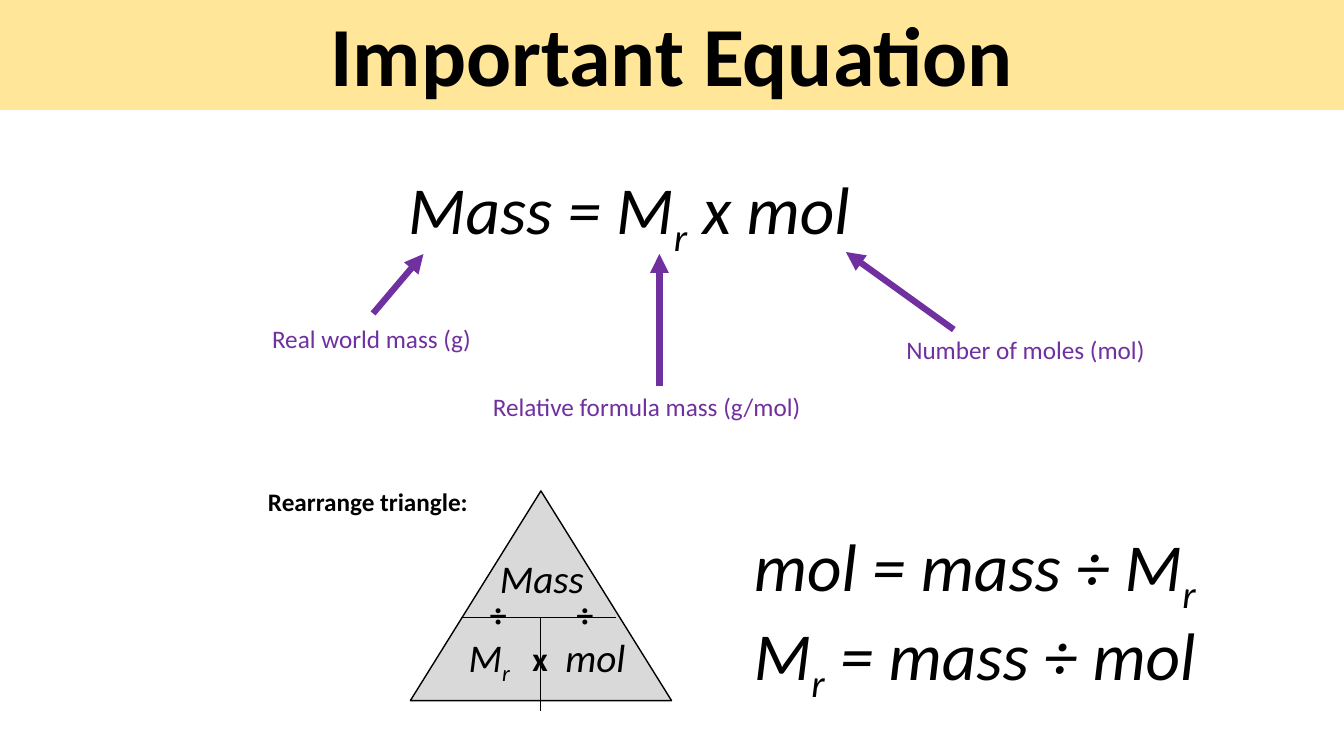
from lxml.etree import SubElement
from pptx import Presentation
from pptx.dml.color import RGBColor
from pptx.enum.shapes import MSO_CONNECTOR as CONN, MSO_SHAPE as SHAPE
from pptx.enum.text import MSO_ANCHOR as ANCHOR, MSO_AUTO_SIZE as AUTO, PP_ALIGN as ALIGN
from pptx.oxml.ns import qn
from pptx.util import Pt

PX = 9144
FONT = "Calibri"
COLORS = {"band": "FFE699", "text": "000000", "label": "7030A0", "triangle": "D9D9D9"}


def px(*lengths):
    """Turn px lengths into EMU."""
    return [n * PX for n in lengths]


def color(name):
    """Look up a named colour."""
    return RGBColor.from_string(COLORS[name])


def format_run(r, size, name="text", bold=False, italic=False):
    """Set the font of a run."""
    f = r.font
    f.name, f.size, f.bold, f.italic = FONT, Pt(size), bold, italic
    f.color.rgb = color(name)


def add_title(slide, text, box):
    """Fill the title placeholder and make it a coloured band."""
    sp = slide.shapes.title
    sp.left, sp.top, sp.width, sp.height = px(*box)
    sp.fill.solid()
    sp.fill.fore_color.rgb = color("band")
    tf = sp.text_frame
    tf.text = text
    tf.vertical_anchor = ANCHOR.BOTTOM
    p = tf.paragraphs[0]
    p.alignment, p.line_spacing = ALIGN.CENTER, 0.9
    format_run(p.runs[0], 60, bold=True)


def add_text(shapes, text, box, size, wrap=False, **style):
    """Add a text box; parts between underscores become subscripts."""
    tf = shapes.add_textbox(*px(*box)).text_frame
    tf.word_wrap, tf.auto_size = wrap, AUTO.SHAPE_TO_FIT_TEXT
    for i, part in enumerate(text.split("_")):
        if part:
            r = tf.paragraphs[0].add_run()
            r.text = part
            format_run(r, size, **style)
            if i % 2:
                r.font._element.set("baseline", "-25000")


def add_line(shapes, ends, name, width, arrow=False):
    """Add a straight line, with an arrowhead at its end if asked."""
    c = shapes.add_connector(CONN.STRAIGHT, *px(*ends))
    c.line.color.rgb = color(name)
    c.line.width = Pt(width)
    if arrow:
        SubElement(c.line._get_or_add_ln(), qn("a:tailEnd"), type="triangle")
    SubElement(c._element.spPr, qn("a:effectLst"))


def add_callout(slide, text, box, ends):
    """Add a grouped label and arrow."""
    shapes = slide.shapes.add_group_shape().shapes
    add_line(shapes, ends, "label", 4.5, arrow=True)
    add_text(shapes, text, box, 18, name="label")


def add_triangle(slide, box):
    """Add the grey outlined triangle."""
    sp = slide.shapes.add_shape(SHAPE.ISOSCELES_TRIANGLE, *px(*box))
    sp.shadow.inherit = False
    sp.fill.solid()
    sp.fill.fore_color.rgb = color("triangle")
    sp.line.color.rgb = color("text")
    sp.line.width = Pt(1)


def main():
    """Build the slide and save it."""
    prs = Presentation()
    prs.slide_width, prs.slide_height = px(1333, 750)
    slide = prs.slides.add_slide(prs.slide_layouts[0])
    subtitle = slide.placeholders[1]._element
    subtitle.getparent().remove(subtitle)
    shapes = slide.shapes

    add_title(slide, "Important Equation", (0, 0, 1333, 109))
    add_text(shapes, "Mass = M_r_ x mol", (395, 161, 544, 91), 48, wrap=True, italic=True)
    for text, box, ends in [
        ("Real world mass (g)", (260, 316, 220, 40), (370, 311, 420, 252)),
        ("Relative formula mass (g/mol)", (479, 383, 345, 40), (654, 383, 654, 252)),
        ("Number of moles (mol)", (889, 327, 259, 40), (946, 327, 839, 250)),
    ]:
        add_callout(slide, text, box, ends)

    add_text(shapes, "Rearrange triangle:", (256, 478, 220, 40), 18, bold=True)
    add_triangle(slide, (407, 487, 259, 208))
    for text, box in [
        ("Mass", (486, 545, 105, 57)),
        ("M_r_", (455, 623, 63, 57)),
        ("mol", (551, 623, 80, 57)),
    ]:
        add_text(shapes, text, box, 28, italic=True)
    for ends in [(457, 612, 611, 612), (536, 612, 536, 705)]:
        add_line(shapes, ends, "text", 0.5)
    for text, box in [
        ("x", (528, 628, 5, 50)),
        ("÷", (476, 584, 40, 50)),
        ("÷", (562, 584, 40, 50)),
    ]:
        add_text(shapes, text, box, 24, wrap=True, bold=True)

    for text, box in [
        ("mol = mass ÷ M_r_", (738, 515, 480, 91)),
        ("M_r_ = mass ÷ mol", (738, 604, 464, 91)),
    ]:
        add_text(shapes, text, box, 48, italic=True)
    prs.save("out.pptx")


if __name__ == "__main__":
    main()
